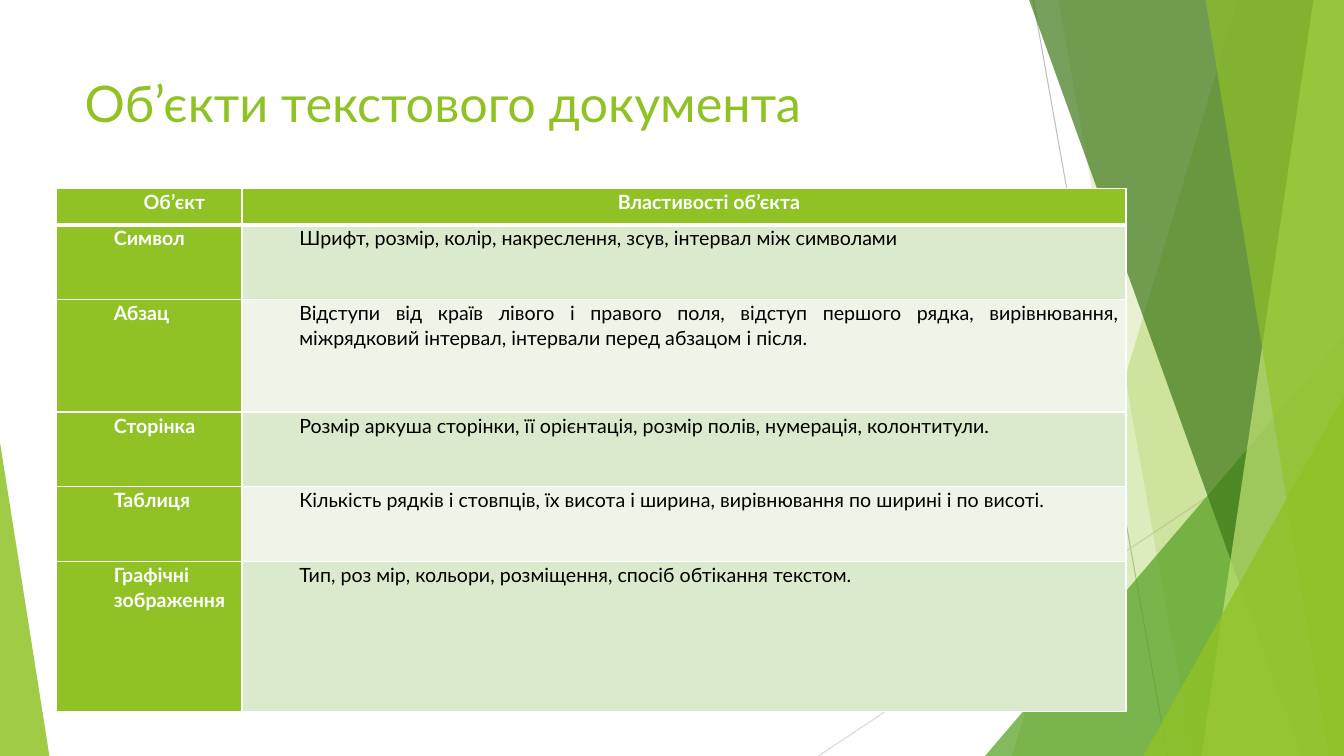
from pptx import Presentation
from pptx.dml.color import RGBColor
from pptx.enum.shapes import MSO_CONNECTOR, MSO_SHAPE
from pptx.enum.text import MSO_ANCHOR, MSO_AUTO_SIZE, PP_ALIGN
from pptx.oxml.ns import qn
from pptx.util import Pt
from lxml.etree import SubElement

FONT = "Lato"
WHITE = RGBColor(0xFF, 0xFF, 0xFF)
BLACK = RGBColor(0, 0, 0)
LIME = RGBColor(0x90, 0xC2, 0x26)
LEAF = RGBColor(0x54, 0xA0, 0x21)
FOREST = RGBColor(0x3F, 0x78, 0x19)
PALE_LIME = RGBColor(0xC0, 0xE4, 0x74)
BAND_DARK = RGBColor(0xDB, 0xE9, 0xCD)
BAND_LIGHT = RGBColor(0xEE, 0xF4, 0xE8)
GREY = RGBColor(0xBF, 0xBF, 0xBF)
LIGHT_GREY = RGBColor(0xD9, 0xD9, 0xD9)

SLIDE_WIDTH, SLIDE_HEIGHT = 960, 540
COLUMN_WIDTHS = [132.5, 631.5]
ROW_HEIGHTS = [25.9, 53.3, 80.6, 53.3, 53.3, 107.3]
ROWS = [
    ("Об’єкт", "Властивості об’єкта"),
    ("Символ", "Шрифт, розмір, колір, накреслення, зсув, інтервал між символами"),
    ("Абзац", "Відступи від країв лівого і правого поля, відступ першого рядка, "
              "вирівнювання, міжрядковий інтервал, інтервали перед абзацом і після."),
    ("Сторінка", "Розмір аркуша сторінки, її орієнтація, розмір полів, нумерація, колонтитули."),
    ("Таблиця", "Кількість рядків і стовпців, їх висота і ширина, вирівнювання по ширині і по висоті."),
    ("Графічні зображення", "Тип, роз мір, кольори, розміщення, спосіб обтікання текстом."),
]


def paint(shape, color, opacity):
    """Flat fill with the given opacity in percent, no outline or shadow."""
    shape.shadow.inherit = False
    shape.fill.solid()
    shape.fill.fore_color.rgb = color
    shape.line.fill.background()
    color_element = shape._element.spPr.find(qn("a:solidFill"))[0]
    SubElement(color_element, qn("a:alpha"), val=str(opacity * 1000))


def add_backdrop(slide, left, top, width, height):
    shapes = slide.shapes.add_group_shape().shapes
    right, bottom = left + width, top + height

    def add_line(start, end, color):
        line = shapes.add_connector(
            MSO_CONNECTOR.STRAIGHT, Pt(left + start[0]), Pt(top + start[1]),
            Pt(left + end[0]), Pt(top + end[1]))
        line.line.color.rgb = color
        line.line.width = Pt(0.75)
        SubElement(line._element.spPr, qn("a:effectLst"))

    def add_beam(top_x, bottom_x, color, opacity):
        """Band between a slanted left side and the right edge."""
        builder = shapes.build_freeform(Pt(left + top_x), Pt(top))
        builder.add_line_segments([
            (Pt(right), Pt(top)), (Pt(right), Pt(bottom)),
            (Pt(left + bottom_x), Pt(bottom))])
        paint(builder.convert_to_shape(), color, opacity)

    def add_corner(x, corner_width, corner_height, apex, color, opacity):
        """Right triangle standing on the bottom edge."""
        triangle = shapes.add_shape(
            MSO_SHAPE.ISOSCELES_TRIANGLE, Pt(left + x), Pt(bottom - corner_height),
            Pt(corner_width), Pt(corner_height))
        triangle.adjustments[0] = apex
        paint(triangle, color, opacity)

    add_line((738, 0), (834, 540), GREY)
    add_line((960, 290), (584.6, 540), LIGHT_GREY)
    add_beam(884.2, 722.9, LIME, 30)
    add_beam(756, 851.8, LIME, 20)
    add_corner(703.6, 256.4, 300, 1, LEAF, 72)
    add_beam(735.1, 929.5, FOREST, 70)
    add_beam(938.2, 858.2, PALE_LIME, 70)
    add_beam(861.1, 949, LIME, 65)
    add_corner(816.7, 143.3, 257, 1, LIME, 80)
    add_corner(0, 35.3, 224, 0, LIME, 85)


def format_runs(paragraph, size, color, bold):
    for run in paragraph.runs:
        run.font.name = FONT
        run.font.size = Pt(size)
        run.font.bold = bold
        run.font.color.rgb = color


def add_title(slide, left, top, width, height):
    title = slide.shapes.title
    title.left, title.top, title.width, title.height = map(Pt, (left, top, width, height))
    frame = title.text_frame
    frame.text = "Об’єкти текстового документа"
    frame.word_wrap = True
    frame.auto_size = MSO_AUTO_SIZE.NONE
    frame.vertical_anchor = MSO_ANCHOR.TOP
    frame.paragraphs[0].alignment = PP_ALIGN.LEFT
    format_runs(frame.paragraphs[0], 36, LIME, False)
    # Bring the title in front of the backdrop
    title._element.getparent().append(title._element)


def set_borders(cell, widths):
    properties = cell._tc.get_or_add_tcPr()
    for side, width in zip("LRTB", widths):
        border = SubElement(properties, qn(f"a:ln{side}"), w=str(Pt(width)))
        fill = SubElement(border, qn("a:solidFill"))
        SubElement(fill, qn("a:srgbClr"), val=str(WHITE))


def format_cell(cell, text, row, column):
    is_header = row == 0
    is_label = is_header or column == 0
    # A thick rule separates the header from the body
    set_borders(cell, (1, 1, 3 if row == 1 else 1, 3 if is_header else 1))
    cell.fill.solid()
    cell.fill.fore_color.rgb = LIME if is_label else BAND_DARK if row % 2 else BAND_LIGHT
    cell.margin_left = cell.margin_right = Pt(5)
    cell.margin_top = cell.margin_bottom = Pt(0)
    cell.text_frame.text = text
    paragraph = cell.text_frame.paragraphs[0]
    paragraph.alignment = PP_ALIGN.CENTER if is_header else PP_ALIGN.JUSTIFY
    paragraph.line_spacing = 1.07
    indents = paragraph._p.get_or_add_pPr()
    indents.set("marL", str(Pt(36)))
    indents.set("indent", "0")
    format_runs(paragraph, 14, WHITE if is_label else BLACK, is_label)


def add_object_table(slide, left, top, width, height):
    table = slide.shapes.add_table(
        len(ROWS), len(COLUMN_WIDTHS), Pt(left), Pt(top), Pt(width), Pt(height)).table
    for column, column_width in zip(table.columns, COLUMN_WIDTHS):
        column.width = Pt(column_width)
    for row, row_height in zip(table.rows, ROW_HEIGHTS):
        row.height = Pt(row_height)
    for row, texts in enumerate(ROWS):
        for column, text in enumerate(texts):
            format_cell(table.cell(row, column), text, row, column)


def main():
    presentation = Presentation()
    presentation.slide_width = Pt(SLIDE_WIDTH)
    presentation.slide_height = Pt(SLIDE_HEIGHT)
    slide = presentation.slides.add_slide(presentation.slide_layouts.get_by_name("Title Only"))
    add_backdrop(slide, 0, 0, SLIDE_WIDTH, SLIDE_HEIGHT)
    add_title(slide, 53.3, 48.2, 676.8, 103.7)
    add_object_table(slide, 40.3, 134.6, sum(COLUMN_WIDTHS), sum(ROW_HEIGHTS))
    presentation.save("out.pptx")


if __name__ == "__main__":
    main()
